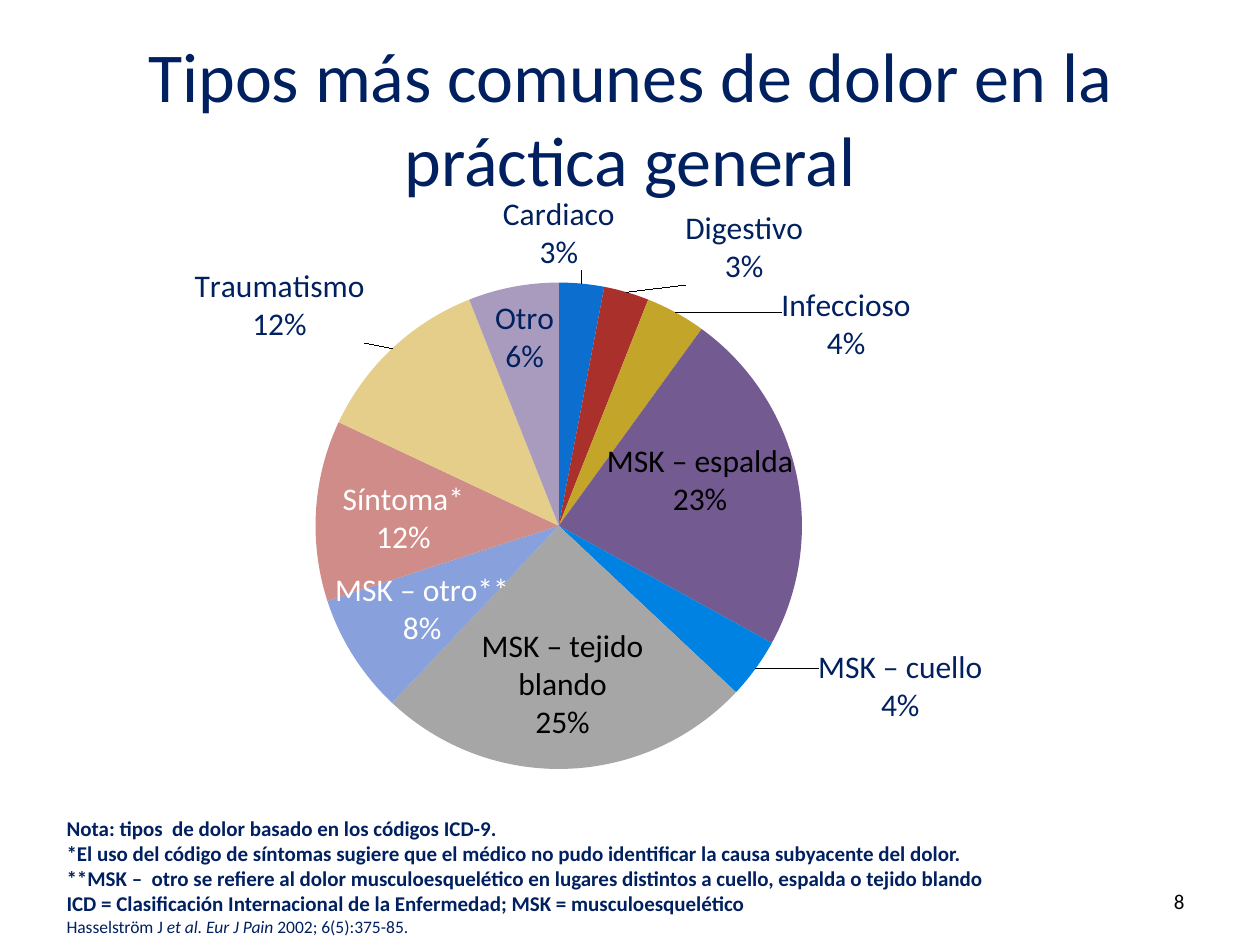
"""Build a slide with a pie chart of the common kinds of pain in general practice."""
from lxml.etree import SubElement
from pptx import Presentation
from pptx.chart.data import CategoryChartData
from pptx.dml.color import RGBColor
from pptx.enum.chart import XL_CHART_TYPE, XL_LABEL_POSITION
from pptx.enum.text import MSO_ANCHOR, PP_ALIGN
from pptx.oxml import parse_xml
from pptx.oxml.ns import nsdecls, qn
from pptx.util import Inches, Pt

NAVY = RGBColor(0x00, 0x20, 0x60)
BLACK = RGBColor(0x00, 0x00, 0x00)
WHITE = RGBColor(0xFF, 0xFF, 0xFF)
BLUE = RGBColor(0x0C, 0x6F, 0xCF)
RED = RGBColor(0xAA, 0x30, 0x2C)
GOLD = RGBColor(0xC3, 0xA5, 0x2A)
PLUM = RGBColor(0x73, 0x5A, 0x91)
SKY = RGBColor(0x00, 0x82, 0xE3)
GREY = RGBColor(0xA6, 0xA6, 0xA6)
PALE_BLUE = RGBColor(0x88, 0xA0, 0xDC)
PALE_RED = RGBColor(0xD0, 0x8C, 0x88)
PALE_GOLD = RGBColor(0xE4, 0xCE, 0x8A)
PALE_PLUM = RGBColor(0xA9, 0x9B, 0xBD)

OUT = XL_LABEL_POSITION.OUTSIDE_END
MID = XL_LABEL_POSITION.CENTER

SLICES = [
    ("Cardiaco", 3, BLUE, NAVY, OUT, (-0.07, -0.01)),
    ("Digestivo", 3, RED, NAVY, OUT, (0.05, 0)),
    ("Infeccioso", 4, GOLD, NAVY, OUT, (0.09, 0.09)),
    ("MSK – espalda", 23, PLUM, BLACK, MID, (0.02, -0.03)),
    ("MSK – cuello", 4, SKY, NAVY, OUT, (0.05, -0.04)),
    ("MSK – tejido blando", 25, GREY, BLACK, MID, (0, 0.06)),
    ("MSK – otro**", 8, PALE_BLUE, WHITE, MID, (-0.03, 0.03)),
    ("Síntoma*", 12, PALE_RED, WHITE, MID, (-0.03, 0)),
    ("Traumatismo", 12, PALE_GOLD, NAVY, OUT, (-0.02, 0)),
    ("Otro", 6, PALE_PLUM, NAVY, MID, (-0.01, -0.11)),
]

NOTES = [
    "Nota: tipos  de dolor basado en los códigos ICD-9.",
    "*El uso del código de síntomas sugiere que el médico no pudo identificar "
    "la causa subyacente del dolor.",
    "**MSK –  otro se refiere al dolor musculoesquelético en lugares distintos "
    "a cuello, espalda o tejido blando",
    "ICD = Clasificación Internacional de la Enfermedad; MSK = musculoesquelético",
]
CITE = [("Hasselström J ", False), ("et al. Eur J Pain", True),
        (" 2002; 6(5):375-85.", False)]


def style(font, size=18, color=NAVY, bold=False, italic=False):
    """Give a font its face, size, colour and weight."""
    font.name = "Calibri"
    font.size = Pt(size)
    font.color.rgb = color
    font.bold = bold
    font.italic = italic


def write(par, text, align=PP_ALIGN.LEFT, **form):
    """Add a run of formatted text to a paragraph."""
    par.alignment = align
    run = par.add_run()
    run.text = text
    style(run.font, **form)


def layout(x, y, w=None, h=None):
    """Return a manual chart layout, for the plot when it has a size."""
    parts = [("x", x), ("y", y)]
    if w:
        parts = [("layoutTarget", "inner"), ("xMode", "edge"),
                 ("yMode", "edge"), *parts, ("w", w), ("h", h)]
    tags = "".join(f'<c:{tag} val="{val}"/>' for tag, val in parts)
    return parse_xml(f'<c:layout {nsdecls("c")}><c:manualLayout>{tags}'
                     "</c:manualLayout></c:layout>")


class Deck:
    """Hold the style and the current slide."""

    def __init__(self):
        """Open a deck with one titled slide."""
        self.show = Presentation()
        self.show.slide_width = Inches(10)
        self.show.slide_height = Inches(7.5)
        self.slide = self.show.slides.add_slide(self.show.slide_layouts[5])

    def title(self, text, *box):
        """Fill and place the title."""
        shape = self.slide.shapes.title
        shape.left, shape.top, shape.width, shape.height = map(Inches, box)
        shape.text_frame.vertical_anchor = MSO_ANCHOR.MIDDLE
        write(shape.text_frame.paragraphs[0], text, PP_ALIGN.CENTER, size=40)

    def text(self, *box, anchor=MSO_ANCHOR.TOP):
        """Add a wrapping text box and return its frame."""
        frame = self.slide.shapes.add_textbox(*map(Inches, box)).text_frame
        frame.word_wrap = True
        frame.vertical_anchor = anchor
        return frame

    def pie(self, slices, *box):
        """Add a pie chart with a label on each slice."""
        data = CategoryChartData()
        data.categories = [row[0] for row in slices]
        data.add_series("Dolor", [row[1] for row in slices])
        chart = self.slide.shapes.add_chart(
            XL_CHART_TYPE.PIE, *map(Inches, box), data).chart
        chart.has_legend = chart.has_title = False
        style(chart.font, color=BLACK)
        plot = chart.plots[0]
        plot.vary_by_categories = True
        series = plot.series[0]
        labels = series.data_labels
        style(labels.font)
        labels.show_category_name = labels.show_percentage = True
        labels.show_value = False
        for spot, (_, _, fill, ink, place, shift) in enumerate(slices):
            point = series.points[spot]
            point.format.fill.solid()
            point.format.fill.fore_color.rgb = fill
            style(point.data_label.font, color=ink)
            point.data_label.position = place
            self.label(series, spot, shift)
        area = chart._chartSpace.find(".//" + qn("c:plotArea"))
        old = area.find(qn("c:layout"))
        if old is not None:
            area.remove(old)
        area.insert(0, layout(0.23, 0.14, 0.43, 0.78))

    def label(self, series, spot, shift):
        """Show name and percent in one label and shift it."""
        node = series._element.findall(".//" + qn("c:dLbl"))[spot]
        node.insert(1, layout(*shift))
        for tag, val in (("showVal", "0"), ("showCatName", "1"),
                         ("showPercent", "1")):
            node.find(qn("c:" + tag)).set("val", val)
        SubElement(node, qn("c:separator")).text = "\n"

    def notes(self, lines, cite, *box):
        """Add the bold notes and the citation below them."""
        frame = self.text(*box)
        for spot, line in enumerate(lines):
            par = frame.add_paragraph() if spot else frame.paragraphs[0]
            write(par, line, size=12, bold=True)
        par = frame.add_paragraph()
        for part, slant in cite:
            write(par, part, size=10, italic=slant)

    def number(self, text, *box):
        """Add the slide number."""
        frame = self.text(*box, anchor=MSO_ANCHOR.MIDDLE)
        write(frame.paragraphs[0], text, PP_ALIGN.RIGHT, size=12, color=BLACK)


def main():
    """Build and save the slide."""
    deck = Deck()
    deck.pie(SLICES, 0.43, 1.55, 9, 4.95)
    deck.notes(NOTES, CITE, 0.43, 6.42, 8.66, 1.08)
    deck.title("Tipos más comunes de dolor en la práctica general",
               0.5, 0.3, 9, 1.25)
    deck.number("8", 7.17, 6.95, 2.33, 0.4)
    deck.show.save("out.pptx")


if __name__ == "__main__":
    main()
